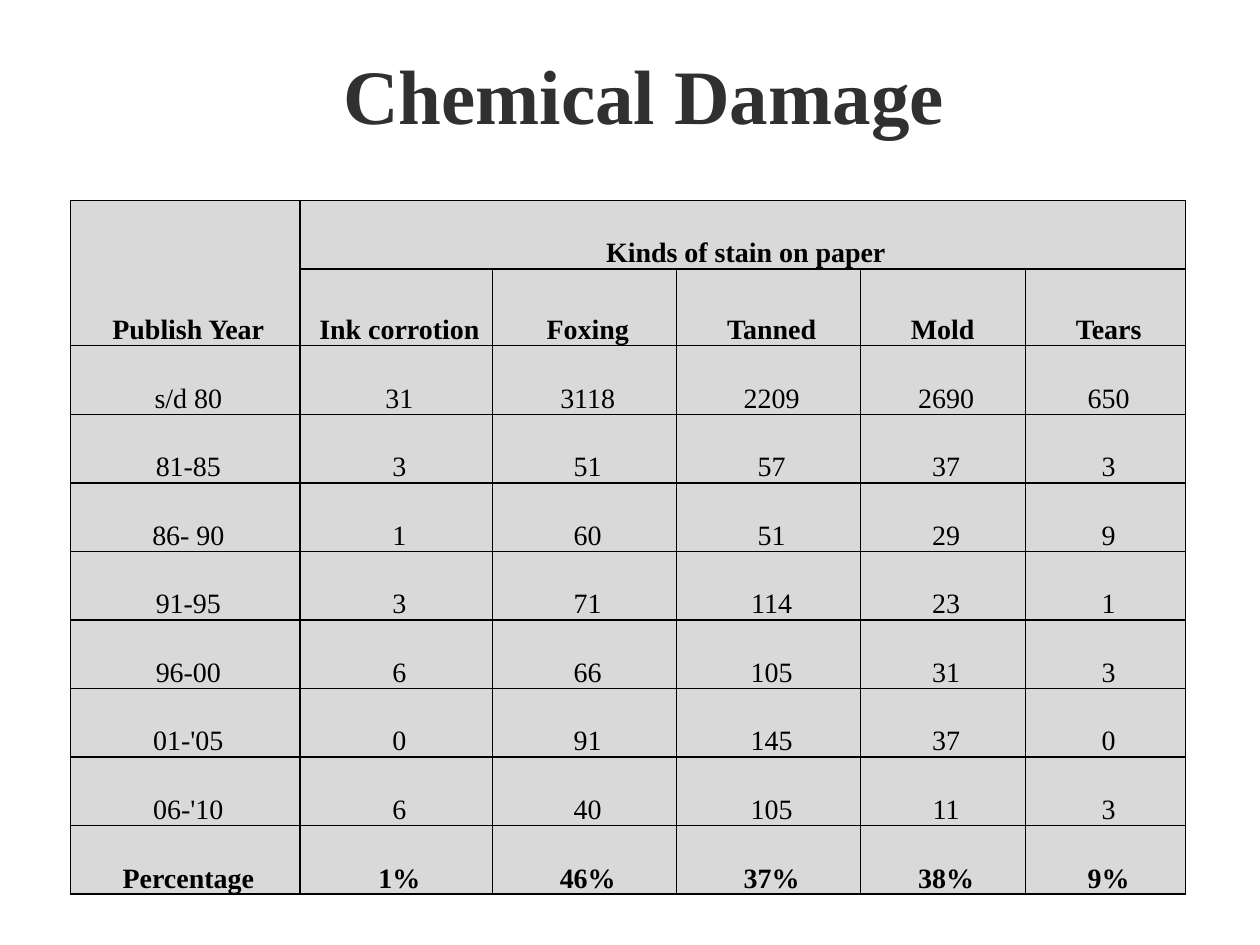
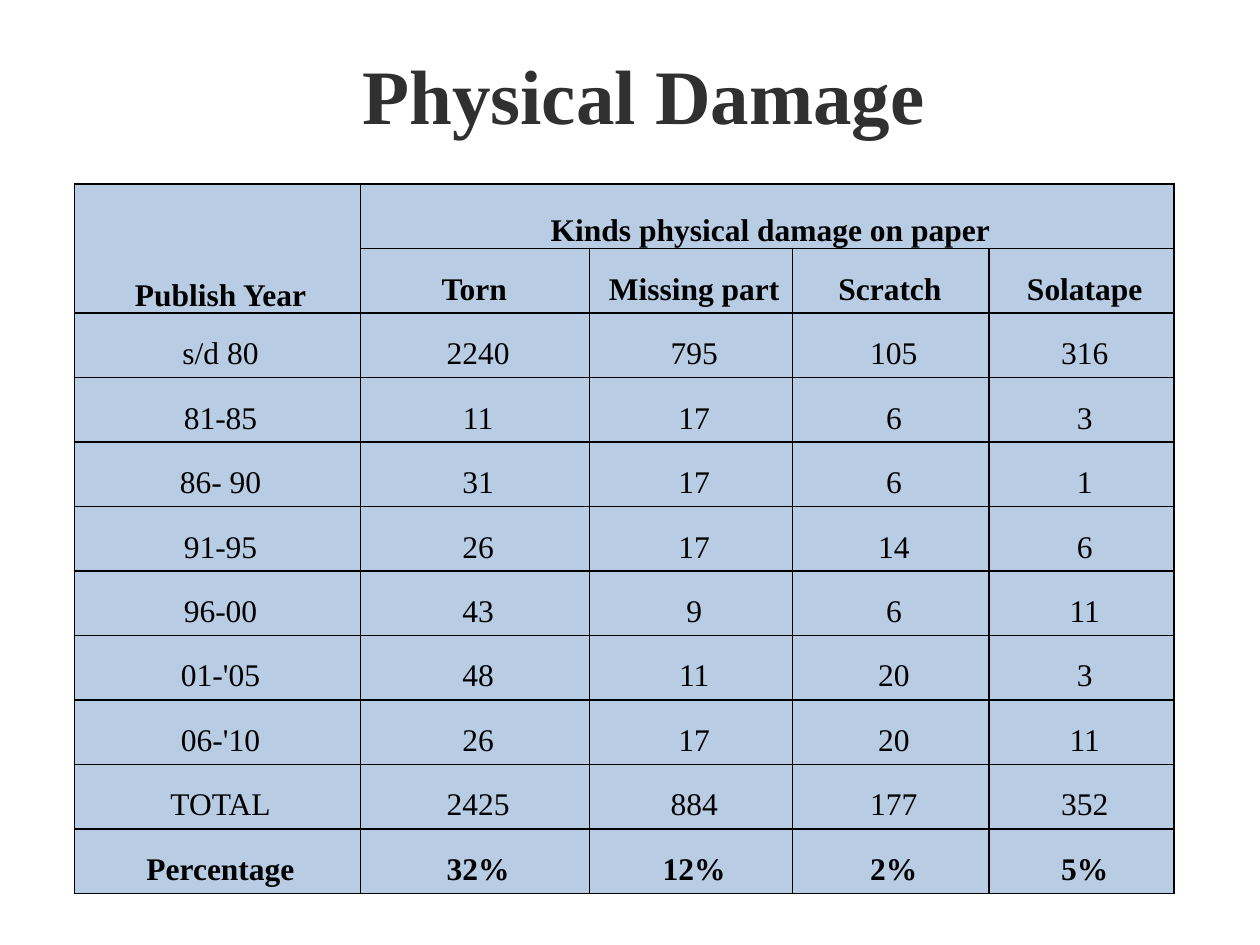
from dataclasses import dataclass

from lxml.etree import SubElement as Sub
from pptx import Presentation
from pptx.dml.color import RGBColor as RGB
from pptx.enum.text import MSO_ANCHOR as Anchor, MSO_AUTO_SIZE as Fit, PP_ALIGN as Align
from pptx.oxml.ns import qn
from pptx.util import Inches, Pt


@dataclass(frozen=True)
class Theme:
    font: str = "Times New Roman"
    ink: str = "303030"
    black: str = "000000"
    gray: str = "D9D9D9"
    blue: str = "B8CCE4"
    title: int = 44
    small: int = 16
    large: int = 18
    rule: float = 1


THEME = Theme()
WIDE, HIGH = 10, 7.5
TITLE_BOX = (0.72, 0.33, 8.78, 0.84)
YEARS = ["s/d 80", "81-85", "86- 90", "91-95", "96-00", "01-'05", "06-'10"]
SUMS = ("Percentage",)

STAINS = dict(
    title="Chemical Damage", group="Kinds of stain on paper",
    heads=["Ink corrotion", "Foxing", "Tanned", "Mold ", "Tears"],
    labels=YEARS + ["Percentage"],
    values=[
        [31, 3118, 2209, 2690, 650],
        [3, 51, 57, 37, 3],
        [1, 60, 51, 29, 9],
        [3, 71, 114, 23, 1],
        [6, 66, 105, 31, 3],
        [0, 91, 145, 37, 0],
        [6, 40, 105, 11, 3],
        ["1%", "46%", "37%", "38%", "9%"],
    ],
    box=(0.56, 1.59, 8.85, 5.51), cols=[1.82, 1.53, 1.46, 1.46, 1.31, 1.27],
    head_row=1.12, fill=THEME.gray, size=THEME.small, anchor=Anchor.BOTTOM,
)
TEARS = dict(
    title="Physical Damage", group="Kinds physical damage on paper",
    heads=["Torn ", "Missing part", "Scratch ", "Solatape"],
    labels=YEARS + ["TOTAL", "Percentage"],
    values=[
        [2240, 795, 105, 316],
        [11, 17, 6, 3],
        [31, 17, 6, 1],
        [26, 17, 14, 6],
        [43, 9, 6, 11],
        [48, 11, 20, 3],
        [26, 17, 20, 11],
        [2425, 884, 177, 352],
        ["32%", "12%", "2%", "5%"],
    ],
    box=(0.59, 1.46, 8.73, 5.63), cols=[2.27, 1.82, 1.61, 1.56, 1.47],
    head_row=1, fill=THEME.blue, size=THEME.large, anchor=Anchor.MIDDLE,
)


def style(para, size, color, bold):
    para.alignment = Align.CENTER
    for run in para.runs:
        font = run.font
        font.name, font.size, font.bold = THEME.font, Pt(size), bold
        font.color.rgb = RGB.from_string(color)


def add_title(slide, text, box):
    frame = slide.shapes.add_textbox(*map(Inches, box)).text_frame
    frame.word_wrap = True
    frame.auto_size = Fit.SHAPE_TO_FIT_TEXT
    frame.text = text
    style(frame.paragraphs[0], THEME.title, THEME.ink, True)


def frame_cell(cell, fill):
    # Borders come before the fill in the cell properties
    props = cell._tc.get_or_add_tcPr()
    for side in ("lnL", "lnR", "lnT", "lnB"):
        line = Sub(props, qn(f"a:{side}"), w=str(Pt(THEME.rule)))
        Sub(Sub(line, qn("a:solidFill")), qn("a:srgbClr"), val=THEME.black)
    cell.fill.solid()
    cell.fill.fore_color.rgb = RGB.from_string(fill)


def write_cell(cell, text, size, bold, anchor):
    cell.vertical_anchor = anchor
    cell.margin_left = cell.margin_right = Inches(0.07)
    cell.margin_top = cell.margin_bottom = 0
    cell.text_frame.text = str(text)
    para = cell.text_frame.paragraphs[0]
    para.line_spacing = 1.5
    props = para._p.get_or_add_pPr()
    props.set("marL", str(Inches(0.3)))
    props.set("indent", str(Inches(-0.25)))
    style(para, size, THEME.black, bold)


def add_grid(slide, data):
    box, cols = data["box"], data["cols"]
    blanks = [""] * (len(cols) - 2)
    rows = [["Publish Year", data["group"], *blanks], ["", *data["heads"]]]
    rows += [[name, *nums] for name, nums in zip(data["labels"], data["values"])]
    table = slide.shapes.add_table(len(rows), len(cols), *map(Inches, box)).table

    # Columns by share, rows equal apart from the column heads
    for col, share in zip(table.columns, cols):
        col.width = Inches(box[2] * share / sum(cols))
    unit = box[3] / (len(rows) - 1 + data["head_row"])
    for i, row in enumerate(table.rows):
        row.height = Inches(unit * (data["head_row"] if i == 1 else 1))

    # Cells
    for i, row in enumerate(rows):
        bold = i < 2 or row[0] in SUMS
        anchor = Anchor.BOTTOM if i == 0 else data["anchor"]
        for j, text in enumerate(row):
            cell = table.cell(i, j)
            frame_cell(cell, data["fill"])
            write_cell(cell, text, data["size"], bold, anchor)

    # Spanning heads
    table.cell(0, 0).merge(table.cell(1, 0))
    table.cell(0, 1).merge(table.cell(0, len(cols) - 1))


def add_page(deck, data):
    slide = deck.slides.add_slide(deck.slide_layouts[6])
    add_title(slide, data["title"], TITLE_BOX)
    add_grid(slide, data)


def main():
    deck = Presentation()
    deck.slide_width, deck.slide_height = Inches(WIDE), Inches(HIGH)
    for data in (STAINS, TEARS):
        add_page(deck, data)
    deck.save("out.pptx")


if __name__ == "__main__":
    main()
